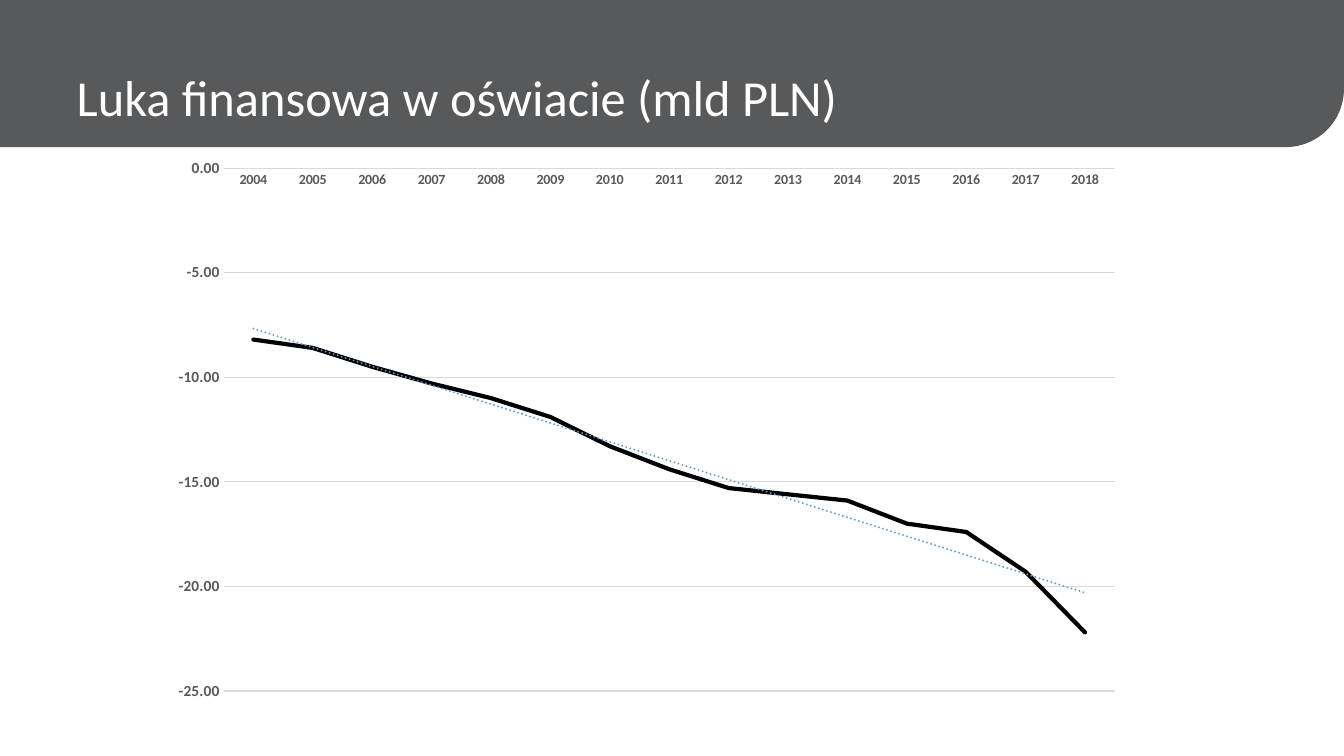
from lxml import etree
from pptx import Presentation
from pptx.chart.data import CategoryChartData
from pptx.dml.color import RGBColor
from pptx.enum.chart import XL_CHART_TYPE, XL_MARKER_STYLE, XL_TICK_MARK
from pptx.enum.shapes import MSO_SHAPE
from pptx.enum.text import MSO_ANCHOR, MSO_AUTO_SIZE, PP_ALIGN
from pptx.oxml import parse_xml
from pptx.oxml.ns import nsdecls
from pptx.util import Inches, Pt

COLORS = {"band": "58595B", "title": "FFFFFF", "line": "000000",
          "labels": "595959", "grid": "D9D9D9", "trend": "5B9BD5"}
FONT = "Calibri"
BAND_H = Inches(1.46)


def rgb(name):
    return RGBColor.from_string(COLORS[name])


def set_font(font, **formats):
    font.name = FONT
    font.color.rgb = rgb(formats.pop("color"))
    for key, value in formats.items():
        setattr(font, key, value)


prs = Presentation()
prs.slide_width, prs.slide_height = Inches(13.33), Inches(7.5)
s = prs.slides.add_slide(prs.slide_layouts[5])

# Header band, its rounded corner flipped to the bottom right
band = s.shapes.add_shape(MSO_SHAPE.ROUND_1_RECTANGLE, 0, 0, prs.slide_width, BAND_H)
band.adjustments[0] = 0.395
band.shadow.inherit = False
band.fill.solid()
band.fill.fore_color.rgb = rgb("band")
band.line.fill.background()
band.element.spPr.xfrm.set("flipV", "1")
s.shapes.title.element.addprevious(band.element)

# Title
title = s.shapes.title
title.left, title.top = Inches(0.66), 0
title.width, title.height = Inches(11.76), Inches(1.21)
tf = title.text_frame
tf.text = "Luka finansowa w oświacie (mld PLN)"
for key, value in {"auto_size": MSO_AUTO_SIZE.NONE, "word_wrap": True,
                   "vertical_anchor": MSO_ANCHOR.TOP,
                   "margin_top": Inches(0.66), "margin_bottom": 0}.items():
    setattr(tf, key, value)
p = tf.paragraphs[0]
p.alignment = PP_ALIGN.LEFT
set_font(p.runs[0].font, color="title", size=Pt(36))

# Line chart
data = CategoryChartData(number_format="#,##0.00")
data.categories = [str(year) for year in range(2004, 2019)]
data.add_series("Series 1", [-8.2, -8.6, -9.5, -10.3, -11, -11.9, -13.3, -14.4,
                             -15.3, -15.6, -15.9, -17, -17.4, -19.3, -22.2])
chart = s.shapes.add_chart(XL_CHART_TYPE.LINE, Inches(1.59), BAND_H,
                           Inches(9.67), Inches(5.61), data).chart
chart.has_title = False
chart.has_legend = False
set_font(chart.font, color="line", size=Pt(10))

years, amounts = chart.category_axis, chart.value_axis
for axis, size in ((years, 10), (amounts, 11)):
    axis.major_tick_mark = axis.minor_tick_mark = XL_TICK_MARK.NONE
    set_font(axis.tick_labels.font, color="labels", size=Pt(size), bold=True)
for key, value in {"minimum_scale": -25, "maximum_scale": 0, "major_unit": 5,
                   "has_major_gridlines": True}.items():
    setattr(amounts, key, value)
amounts.tick_labels.number_format = "#,##0.00"
amounts.tick_labels.number_format_is_linked = False
amounts.format.line.fill.background()
for line in (years.format.line, amounts.major_gridlines.format.line):
    line.color.rgb = rgb("grid")
    line.width = Pt(0.75)

plot = chart.plots[0]
plot.vary_by_categories = False
gap = plot.series[0]
gap.smooth = False
gap.marker.style = XL_MARKER_STYLE.NONE
gap.format.line.color.rgb = rgb("line")
gap.format.line.width = Pt(3)
gap.format.line._get_or_add_ln().set("cap", "rnd")

# Linear trend line, placed before the categories in the series
trend = parse_xml(
    f'<c:trendline {nsdecls("c", "a")}><c:spPr><a:ln w="{Pt(1.5)}" cap="rnd">'
    f'<a:solidFill><a:srgbClr val="{COLORS["trend"]}"/></a:solidFill>'
    '<a:prstDash val="sysDot"/></a:ln></c:spPr>'
    '<c:trendlineType val="linear"/><c:dispRSqr val="0"/><c:dispEq val="0"/>'
    '</c:trendline>')
gap._element.find("{*}cat").addprevious(trend)

# Inner plot area as shares of the chart frame
plot_area = chart._chartSpace.chart.plotArea
for old in plot_area.findall("{*}layout"):
    plot_area.remove(old)
layout = parse_xml(f'<c:layout {nsdecls("c")}><c:manualLayout/></c:layout>')
for tag, value in (("layoutTarget", "inner"), ("xMode", "edge"), ("yMode", "edge"),
                   ("x", 0.065), ("y", 0.037), ("w", 0.914), ("h", 0.925)):
    namespace = layout.nsmap["c"]
    etree.SubElement(layout[0], f"{{{namespace}}}{tag}").set("val", str(value))
plot_area.insert(0, layout)

prs.save("out.pptx")
